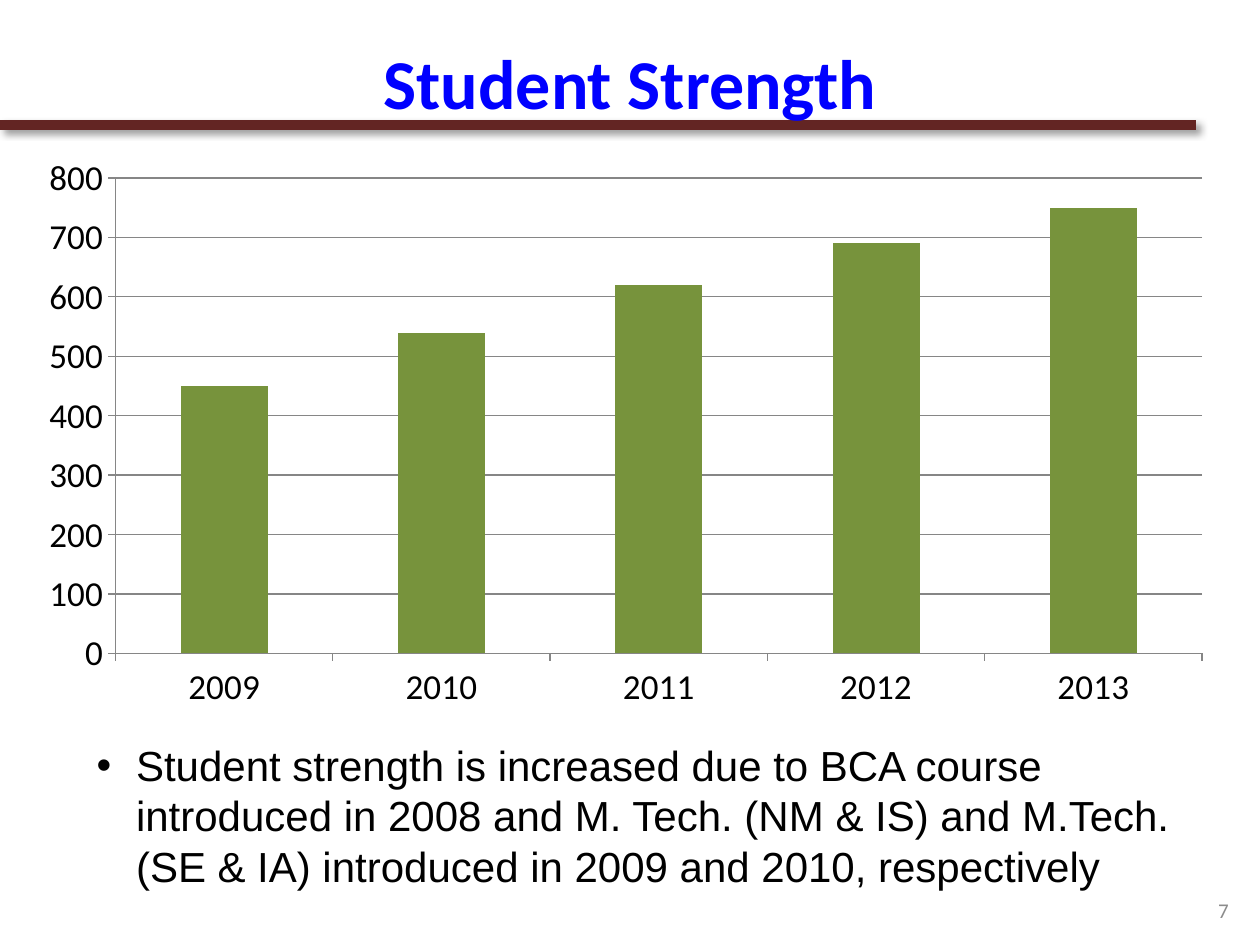
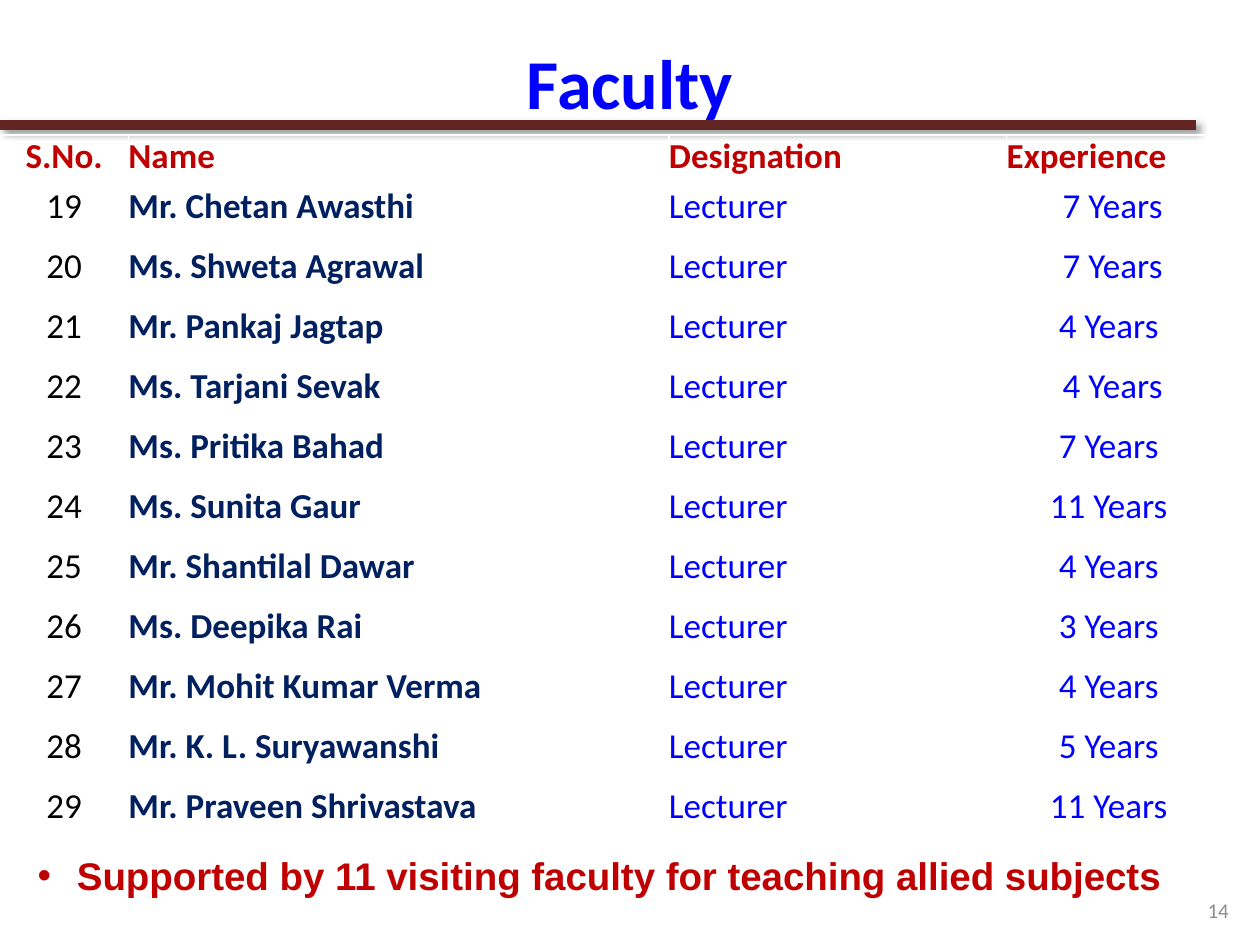
from lxml.etree import SubElement
from pptx import Presentation
from pptx.chart.data import CategoryChartData
from pptx.dml.color import RGBColor
from pptx.enum.chart import XL_CHART_TYPE, XL_TICK_MARK
from pptx.enum.shapes import MSO_CONNECTOR
from pptx.enum.text import MSO_ANCHOR, MSO_AUTO_SIZE, PP_ALIGN
from pptx.oxml import parse_xml
from pptx.oxml.ns import nsdecls, qn
from pptx.util import Pt

BLUE = RGBColor(0x00, 0x00, 0xFF)
NAVY = RGBColor(0x00, 0x20, 0x60)
RED = RGBColor(0xC0, 0x00, 0x00)
MAROON = RGBColor(0x63, 0x25, 0x23)
GREEN = RGBColor(0x77, 0x93, 0x3C)
GREY = RGBColor(0x8C, 0x8C, 0x8C)
GRID_GREY = RGBColor(0x86, 0x86, 0x86)
BLACK = RGBColor(0x00, 0x00, 0x00)

# Boxes: left, top, width, height in points
TITLE_BOX = (36, 21.6, 648, 49.7)
NUMBER_BOX = (541.5, 508.3, 167.8, 23)
CHART_BOX = (14.4, 82.8, 686.2, 329)
CHART_NOTE_BOX = (48.2, 419, 652.3, 94.3)
TABLE_BOX = (0, 77, 691.9, 406.1)
TABLE_NOTE_BOX = (14.4, 483.1, 667.4, 33.8)
RULE_Y, RULE_END = 71.3, 683.3
BULLET_INDENT = 22.5

# Text formats
TITLE = dict(name="Calibri", size=Pt(40), bold=True, color=BLUE)
NUMBER = dict(name="Calibri", size=Pt(12), bold=False, color=GREY)
AXIS = dict(name="Calibri", size=Pt(20), bold=False, color=BLACK)
CHART_NOTE = dict(name="Arial", size=Pt(24), bold=False, color=BLACK)
TABLE_NOTE = dict(name="Arial", size=Pt(22), bold=True, color=RED)
HEADER = dict(AXIS, bold=True, color=RED)
NAME = dict(AXIS, bold=True, color=NAVY)
DETAIL = dict(AXIS, color=BLUE)

STRENGTH = {"2009": 450, "2010": 540, "2011": 620, "2012": 690, "2013": 750}

HEADINGS = ("S.No.", "Name", "Designation", "Experience")
COLUMN_WIDTHS = (73.4, 308.9, 193, 116.6)
HEADER_HEIGHT = 28.8
FIRST_NUMBER = 19
FACULTY = [
    ("Mr. Chetan Awasthi", " 7 Years"),
    ("Ms. Shweta Agrawal", " 7 Years"),
    ("Mr. Pankaj Jagtap", "4 Years"),
    ("Ms. Tarjani Sevak", " 4 Years"),
    ("Ms. Pritika Bahad", "7 Years"),
    ("Ms. Sunita Gaur", "11 Years"),
    ("Mr. Shantilal Dawar", "4 Years"),
    ("Ms. Deepika Rai", "3 Years"),
    ("Mr. Mohit Kumar Verma", "4 Years"),
    ("Mr. K. L. Suryawanshi", "5 Years"),
    ("Mr. Praveen Shrivastava", "11 Years"),
]


def points(box):
    return [Pt(v) for v in box]


def set_font(font, fmt):
    for key, value in fmt.items():
        if key == "color":
            font.color.rgb = value
        else:
            setattr(font, key, value)


def write(tf, text, fmt, align=PP_ALIGN.LEFT):
    p = tf.paragraphs[0]
    p.alignment = align
    r = p.add_run()
    r.text = text
    set_font(r.font, fmt)
    return p


def add_rule(s):
    """Shadowed rule, placed behind the title."""
    line = s.shapes.add_connector(MSO_CONNECTOR.STRAIGHT, 0, Pt(RULE_Y),
                                  Pt(RULE_END), Pt(RULE_Y))
    line.line.color.rgb = MAROON
    line.line.width = Pt(6)
    line._element.spPr.append(parse_xml(
        f'<a:effectLst {nsdecls("a")}>'
        f'<a:outerShdw blurRad="{Pt(4)}" dist="{Pt(3)}" dir="2700000" algn="tl" rotWithShape="0">'
        '<a:srgbClr val="000000"><a:alpha val="40000"/></a:srgbClr>'
        '</a:outerShdw></a:effectLst>'))
    s.shapes._spTree.insert(2, line._element)


def add_page(prs, title, number):
    """Slide with the shared rule, title and page number."""
    s = prs.slides.add_slide(prs.slide_layouts[5])
    add_rule(s)
    sp = s.shapes.title
    sp.left, sp.top, sp.width, sp.height = points(TITLE_BOX)
    sp.text_frame.vertical_anchor = MSO_ANCHOR.MIDDLE
    sp.text_frame.auto_size = MSO_AUTO_SIZE.NONE
    write(sp.text_frame, title, TITLE, PP_ALIGN.CENTER)

    tf = s.shapes.add_textbox(*points(NUMBER_BOX)).text_frame
    tf.word_wrap = True
    tf.vertical_anchor = MSO_ANCHOR.MIDDLE
    write(tf, str(number), NUMBER, PP_ALIGN.RIGHT)
    return s


def add_bullet_note(s, box, text, fmt, wrap=True):
    tf = s.shapes.add_textbox(*points(box)).text_frame
    tf.word_wrap = wrap
    tf.auto_size = MSO_AUTO_SIZE.SHAPE_TO_FIT_TEXT
    pPr = write(tf, text, fmt)._p.get_or_add_pPr()
    pPr.set("marL", str(Pt(BULLET_INDENT)))
    pPr.set("indent", str(-Pt(BULLET_INDENT)))
    SubElement(pPr, qn("a:buFont")).set("typeface", "Arial")
    SubElement(pPr, qn("a:buChar")).set("char", "•")


def add_strength_chart(s, box):
    data = CategoryChartData()
    data.categories = list(STRENGTH)
    data.add_series("Series 1", list(STRENGTH.values()))
    chart = s.shapes.add_chart(XL_CHART_TYPE.COLUMN_CLUSTERED, *points(box), data).chart
    chart.has_legend = chart.has_title = False
    set_font(chart.font, dict(AXIS, size=Pt(10)))

    plot = chart.plots[0]
    plot.gap_width = 150
    plot.vary_by_categories = False
    fill = plot.series[0].format.fill
    fill.solid()
    fill.fore_color.rgb = GREEN

    scale = chart.value_axis
    scale.minimum_scale, scale.maximum_scale, scale.major_unit = 0, 800, 100
    scale.has_major_gridlines = True
    for axis in (chart.category_axis, scale):
        axis.major_tick_mark = XL_TICK_MARK.OUTSIDE
        set_font(axis.tick_labels.font, AXIS)
    for part in (chart.category_axis, scale, scale.major_gridlines):
        part.format.line.color.rgb = GRID_GREY
        part.format.line.width = Pt(0.75)


def format_cell(cell, text, fmt, align):
    for side in ("left", "top", "right", "bottom"):
        setattr(cell, f"margin_{side}", 0)
    write(cell.text_frame, text, fmt, align)
    # White borders come before the fill in the cell properties
    tcPr = cell._tc.get_or_add_tcPr()
    for tag, width in (("lnL", 1), ("lnR", 1), ("lnT", 1.5), ("lnB", 1.5)):
        tcPr.append(parse_xml(
            f'<a:{tag} {nsdecls("a")} w="{Pt(width)}"><a:solidFill>'
            f'<a:srgbClr val="FFFFFF"/></a:solidFill></a:{tag}>'))
    cell.fill.background()


def add_faculty_table(s, box):
    rows = [(str(n), name, "Lecturer", years)
            for n, (name, years) in enumerate(FACULTY, FIRST_NUMBER)]
    table = s.shapes.add_table(len(rows) + 1, len(HEADINGS), *points(box)).table
    table.first_row = table.horz_banding = False
    for column, width in zip(table.columns, COLUMN_WIDTHS):
        column.width = Pt(width)
    row_height = (box[3] - HEADER_HEIGHT) / len(rows)
    for i, row in enumerate(table.rows):
        row.height = Pt(row_height if i else HEADER_HEIGHT)

    left, center = PP_ALIGN.LEFT, PP_ALIGN.CENTER
    header_style = list(zip([HEADER] * 4, (center, left, left, left)))
    body_style = list(zip((AXIS, NAME, DETAIL, DETAIL), (center, left, left, center)))
    for i, values in enumerate([HEADINGS] + rows):
        styles = body_style if i else header_style
        for j, (text, (fmt, align)) in enumerate(zip(values, styles)):
            format_cell(table.cell(i, j), text, fmt, align)


def build_strength_slide(prs):
    s = add_page(prs, "Student Strength", 7)
    add_strength_chart(s, CHART_BOX)
    add_bullet_note(s, CHART_NOTE_BOX,
                    "Student strength is increased due to BCA course introduced in 2008 "
                    "and M. Tech. (NM & IS) and M.Tech. (SE & IA) introduced in 2009 "
                    "and 2010, respectively", CHART_NOTE)


def build_faculty_slide(prs):
    s = add_page(prs, "Faculty", 14)
    add_faculty_table(s, TABLE_BOX)
    add_bullet_note(s, TABLE_NOTE_BOX,
                    "Supported by 11 visiting faculty for teaching allied subjects",
                    TABLE_NOTE, wrap=False)


def main():
    prs = Presentation()
    prs.slide_width, prs.slide_height = Pt(720), Pt(540)
    build_strength_slide(prs)
    build_faculty_slide(prs)
    prs.save("out.pptx")


if __name__ == "__main__":
    main()
